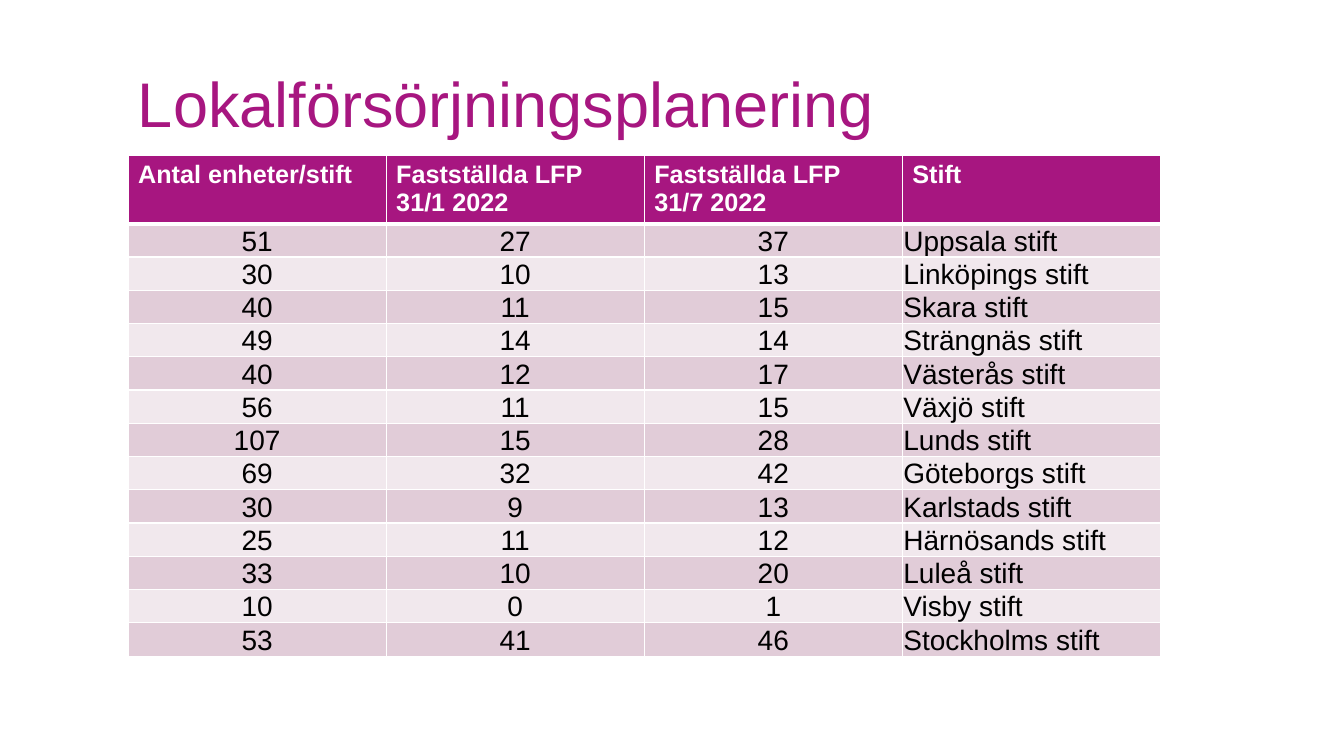
from pptx import Presentation
from pptx.dml.color import RGBColor as Rgb
from pptx.enum.text import MSO_ANCHOR as Anchor, PP_ALIGN as Align
from pptx.oxml import parse_xml
from pptx.oxml.ns import nsdecls
from pptx.util import Inches, Pt

TITLE = "Lokalförsörjningsplanering"
HEADS = ["Antal enheter/stift", "Fastställda LFP 31/1 2022",
         "Fastställda LFP 31/7 2022", "Stift"]
ROWS = [
    (51, 27, 37, "Uppsala stift"),
    (30, 10, 13, "Linköpings stift"),
    (40, 11, 15, "Skara stift"),
    (49, 14, 14, "Strängnäs stift"),
    (40, 12, 17, "Västerås stift"),
    (56, 11, 15, "Växjö stift"),
    (107, 15, 28, "Lunds stift"),
    (69, 32, 42, "Göteborgs stift"),
    (30, 9, 13, "Karlstads stift"),
    (25, 11, 12, "Härnösands stift"),
    (33, 10, 20, "Luleå stift"),
    (10, 0, 1, "Visby stift"),
    (53, 41, 46, "Stockholms stift"),
]
COLORS = {"plum": "A71680", "dark": "E1CCD8", "light": "F1E8ED",
          "white": "FFFFFF", "black": "000000"}
LEFT, TOP, COL_W, HEAD_H, ROW_H = 1.27, 1.54, 2.56, 0.68, 0.33


def color(name):
    return Rgb.from_string(COLORS[name])


def add_run(para, text, size, tint, bold=False):
    run = para.add_run()
    run.text = text
    font = run.font
    font.name, font.size, font.bold = "Arial", Pt(size), bold
    font.color.rgb = color(tint)


def add_edges(cell, top, bottom):
    props = cell._tc.get_or_add_tcPr()
    for side, width in (("L", 1), ("R", 1), ("T", top), ("B", bottom)):
        props.append(parse_xml(
            f'<a:ln{side} {nsdecls("a")} w="{Pt(width)}"><a:solidFill>'
            f'<a:srgbClr val="{COLORS["white"]}"/></a:solidFill></a:ln{side}>'))


def fill_cell(cell, row, value):
    add_edges(cell, 3 if row == 1 else 1, 3 if row == 0 else 1)
    cell.fill.solid()
    para = cell.text_frame.paragraphs[0]
    if row == 0:
        cell.fill.fore_color.rgb = color("plum")
        add_run(para, value, 18, "white", True)
        return
    cell.fill.fore_color.rgb = color("dark" if row % 2 else "light")
    cell.vertical_anchor = Anchor.BOTTOM
    cell.margin_left = cell.margin_right = cell.margin_top = Inches(0.01)
    cell.margin_bottom = 0
    para.alignment = Align.LEFT if isinstance(value, str) else Align.CENTER
    add_run(para, str(value), 20, "black")


def main():
    deck = Presentation()
    deck.slide_width, deck.slide_height = Inches(13.33), Inches(7.5)
    slide = deck.slides.add_slide(deck.slide_layouts[6])

    lines = [HEADS, *ROWS]
    table = slide.shapes.add_table(
        len(lines), len(HEADS), Inches(LEFT), Inches(TOP),
        Inches(COL_W * len(HEADS)), Inches(HEAD_H + ROW_H * len(ROWS))).table
    table.horz_banding = False
    for col in table.columns:
        col.width = Inches(COL_W)
    for row, line in enumerate(lines):
        table.rows[row].height = Inches(ROW_H if row else HEAD_H)
        for col, value in enumerate(line):
            fill_cell(table.cell(row, col), row, value)

    box = slide.shapes.add_textbox(
        Inches(LEFT), Inches(0.61), Inches(11.15), Inches(0.83))
    frame = box.text_frame
    frame.word_wrap = True
    frame.vertical_anchor = Anchor.BOTTOM
    add_run(frame.paragraphs[0], TITLE, 45, "plum")

    deck.save("out.pptx")


if __name__ == "__main__":
    main()
